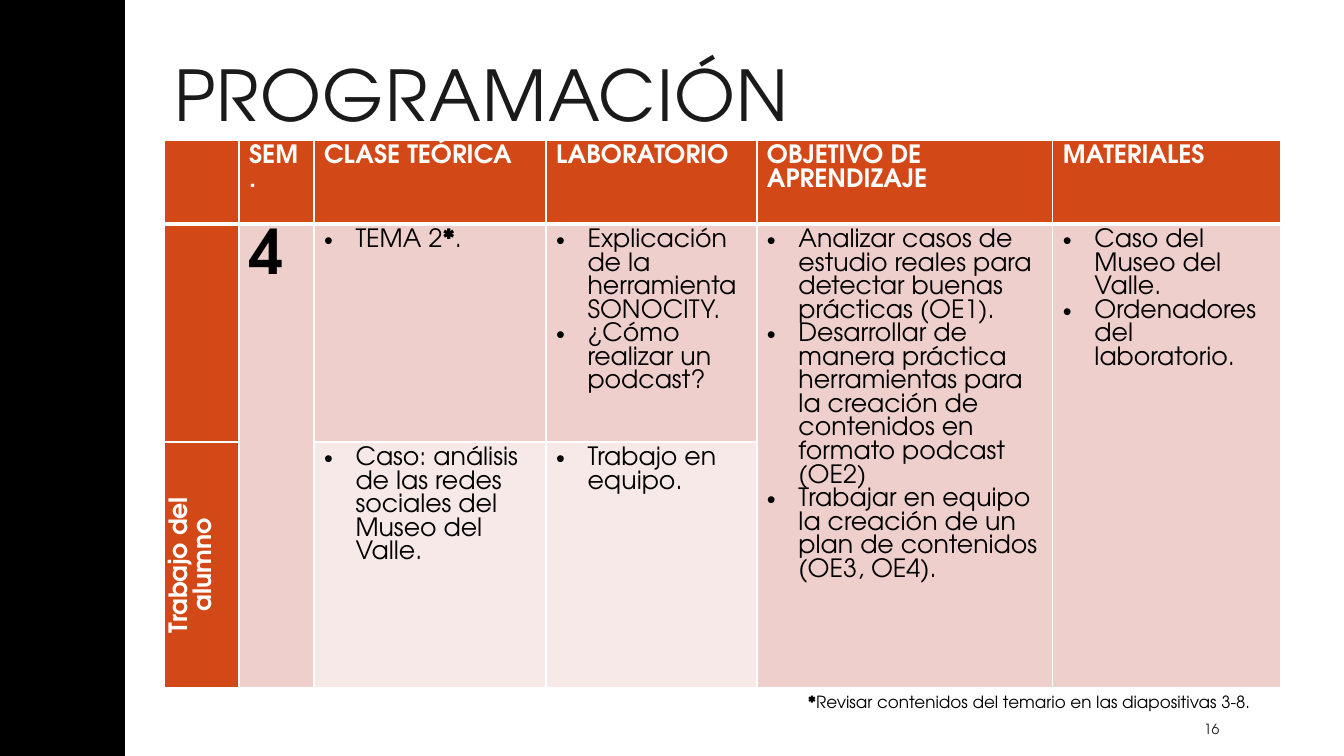
from lxml.etree import SubElement
from pptx import Presentation
from pptx.dml.color import RGBColor
from pptx.enum.shapes import MSO_SHAPE as Shape
from pptx.enum.text import MSO_ANCHOR as Anchor, MSO_AUTO_SIZE as AutoSize, PP_ALIGN as Align
from pptx.oxml.ns import qn
from pptx.util import Pt

PX = 914400 / 100.8
FONT = "TeX Gyre Adventor"
ORANGE, PINK, PALE, WHITE, BLACK, DARK = "D34817", "EFCFCC", "F7E9E8", "FFFFFF", "000000", "1A1A1A"


def px(*lengths):
    return [round(length * PX) for length in lengths]


def write(frame, text, size=18, color=BLACK, bold=False, bullet=False, align=Align.LEFT, line_spacing=None):
    for index, line in enumerate(text.split("\n")):
        paragraph = frame.add_paragraph() if index else frame.paragraphs[0]
        paragraph.alignment = align
        if line_spacing:
            paragraph.line_spacing = line_spacing
        if bullet:
            properties = paragraph._p.get_or_add_pPr()
            properties.set("marL", "285750")
            properties.set("indent", "-285750")
            SubElement(properties, qn("a:buFont"), typeface="Arial")
            SubElement(properties, qn("a:buChar"), char="•")
        for part in line.partition("*"):
            if part:
                run = paragraph.add_run()
                run.text = part
                run.font.name = FONT
                run.font.size = Pt(size)
                run.font.bold = bold or part == "*"
                run.font.color.rgb = RGBColor.from_string(color)


presentation = Presentation()
presentation.slide_width, presentation.slide_height = px(1344, 756)
slide = presentation.slides.add_slide(presentation.slide_layouts[5])

title = slide.shapes.title
title.left, title.top, title.width, title.height = px(164, 19, 1072, 165)
title.text_frame.auto_size = AutoSize.NONE
title.text_frame.vertical_anchor = Anchor.MIDDLE
write(title.text_frame, "PROGRAMACIÓN", size=50, color=DARK, line_spacing=0.8)
title.text_frame.paragraphs[0].runs[0].font._element.set("spc", "100")

side_band = slide.shapes.add_shape(Shape.RECTANGLE, *px(0, 0, 124, 756))
side_band.shadow.inherit = False
side_band.fill.solid()
side_band.fill.fore_color.rgb = RGBColor.from_string(BLACK)
side_band.line.color.rgb = RGBColor.from_string(BLACK)
side_band.line.width = Pt(1.25)

columns = [75, 75, 232, 211, 296, 228]
rows = [84, 218, 246]
table = slide.shapes.add_table(3, 6, *px(164, 140, sum(columns), sum(rows))).table
for column, width in zip(table.columns, px(*columns)):
    column.width = width
for row, height in zip(table.rows, px(*rows)):
    row.height = height

fills = [[ORANGE] * 6, [ORANGE] + [PINK] * 5, [ORANGE, PINK, PALE, PALE, PINK, PINK]]
for row, row_fills in enumerate(fills):
    for column, color in enumerate(row_fills):
        cell = table.cell(row, column)
        properties = cell._tc.get_or_add_tcPr()
        for side in "LRTB":
            thick = (row, side) in [(0, "B"), (1, "T")]
            border = SubElement(properties, qn(f"a:ln{side}"), w=str(Pt(3 if thick else 1)))
            SubElement(SubElement(border, qn("a:solidFill")), qn("a:srgbClr"), val=WHITE)
        cell.fill.solid()
        cell.fill.fore_color.rgb = RGBColor.from_string(color)
for column in (1, 4, 5):
    table.cell(1, column).merge(table.cell(2, column))

headings = ["SEM.", "CLASE TEÓRICA", "LABORATORIO", "OBJETIVO DE APRENDIZAJE", "MATERIALES"]
for column, heading in enumerate(headings, 1):
    write(table.cell(0, column).text_frame, heading, color=WHITE, bold=True)

write(table.cell(1, 1).text_frame, "4", size=44, bold=True)
student_work = table.cell(2, 0)
student_work._tc.get_or_add_tcPr().set("vert", "vert270")
write(student_work.text_frame, "Trabajo del alumno", color=WHITE, bold=True, align=Align.CENTER)

contents = {
    (1, 2): "TEMA 2*.",
    (1, 3): "Explicación de la herramienta SONOCITY.\n¿Cómo realizar un podcast?",
    (1, 4): "Analizar casos de estudio reales para detectar buenas prácticas (OE1).\n"
            "Desarrollar de manera práctica herramientas para la creación de contenidos en formato podcast (OE2)\n"
            "Trabajar en equipo la creación de un plan de contenidos (OE3, OE4).",
    (1, 5): "Caso del Museo del Valle.\nOrdenadores del laboratorio.",
    (2, 2): "Caso: análisis de las redes sociales del Museo del Valle.",
    (2, 3): "Trabajo en equipo.",
}
for (row, column), text in contents.items():
    write(table.cell(row, column).text_frame, text, bullet=True)

notes = [
    ((1194, 714, 107, 30), "16", 10, DARK, Anchor.MIDDLE),
    ((798, 687, 570, 30), "*Revisar contenidos del temario en las diapositivas 3-8.", 12, BLACK, Anchor.TOP),
]
for place, text, size, color, anchor in notes:
    frame = slide.shapes.add_textbox(*px(*place)).text_frame
    frame.word_wrap = True
    frame.vertical_anchor = anchor
    write(frame, text, size=size, color=color)

presentation.save("out.pptx")
